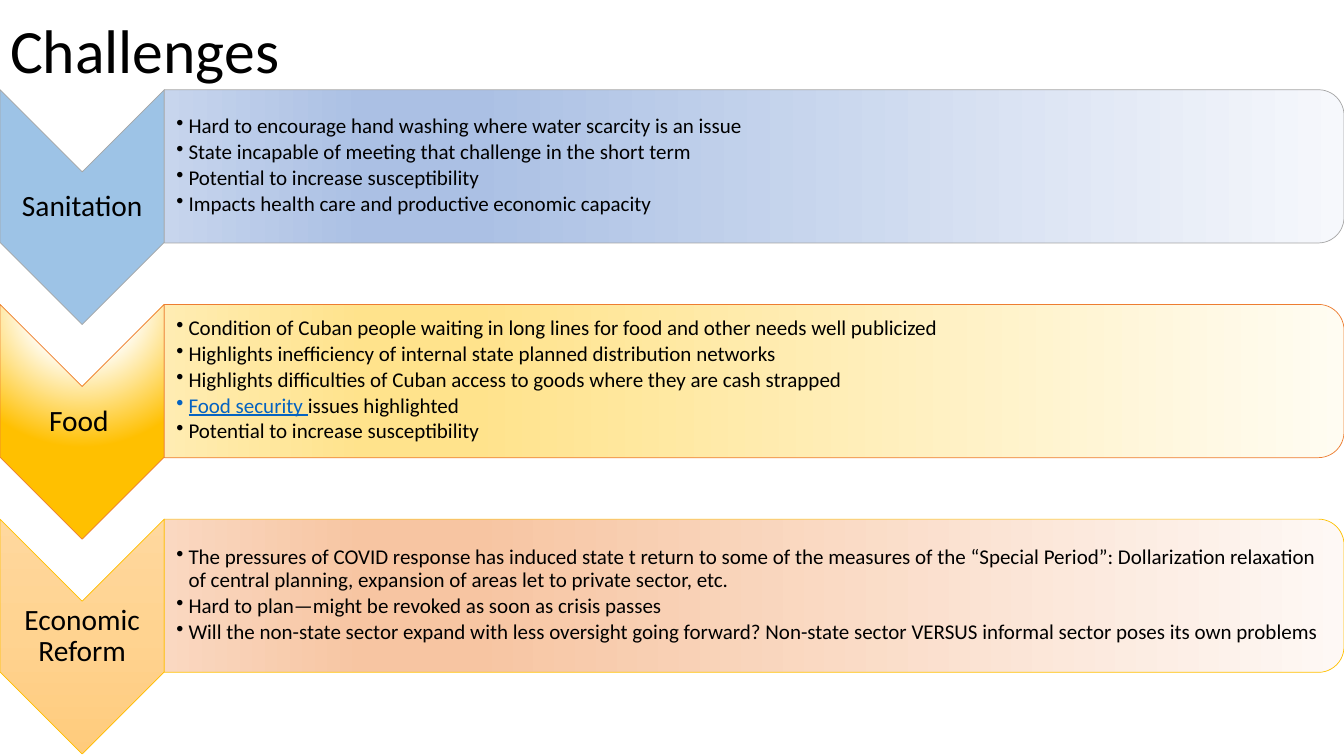
from lxml.etree import SubElement
from pptx import Presentation
from pptx.dml.color import RGBColor
from pptx.enum.shapes import MSO_SHAPE
from pptx.enum.text import MSO_ANCHOR, PP_ALIGN
from pptx.oxml import parse_xml
from pptx.oxml.ns import nsdecls, qn
from pptx.util import Inches, Pt

WIDE, HIGH = 13.33, 7.5
TOP, PITCH = 0.89, 2.13
COL, BAND, DROP = 1.63, 1.52, 2.33
FONT = "Calibri"
HEX = {"ink": "000000", "link": "0563C1", "sky": "9DC3E6",
       "gray": "A5A5A5", "rust": "ED7D31", "gold": "FFC000"}
LINEAR = '<a:lin ang="5400000" scaled="0"/>'
RADIAL = ('<a:path path="circle"><a:fillToRect l="50000" t="-80000" '
          'r="50000" b="180000"/></a:path>')
SPOTS = (0, 74, 83, 100)
LINKED = "Food security "

ROWS = [
    {"name": "Sanitation", "edge": "gray", "arrow": None,
     "band": ("F6F8FC", "ABC0E4", "ABC0E4", "C7D5ED"),
     "items": ["Hard to encourage hand washing where water scarcity is an issue",
               "State incapable of meeting that challenge in the short term",
               "Potential to increase susceptibility",
               "Impacts health care and productive economic capacity"]},
    {"name": "Food ", "edge": "rust",
     "arrow": ([(0, "FFFFFF"), (35, "FFFFFF"), (100, "FFC000")], RADIAL),
     "band": ("FFFCF2", "FFE38C", "FFE38C", "FFECB2"),
     "items": ["Condition of Cuban people waiting in long lines for food and "
               "other needs well publicized",
               "Highlights inefficiency of internal state planned distribution networks",
               "Highlights difficulties of Cuban access to goods where they are cash strapped",
               LINKED + "issues highlighted",
               "Potential to increase susceptibility"]},
    {"name": "Economic Reform", "edge": "gold",
     "arrow": ([(0, "FFD89E"), (50, "FFD390"), (100, "FFCB7C")], LINEAR),
     "band": ("FEF8F5", "F7C5A2", "F7C5A2", "FAD8C1"),
     "items": ["The pressures of COVID response has induced state t return to some "
               "of the measures of the “Special Period”: Dollarization relaxation of "
               "central planning, expansion of areas let to private sector, etc.",
               "Hard to plan—might be revoked as soon as crisis passes",
               "Will the non-state sector expand with less oversight going forward? "
               "Non-state sector VERSUS informal sector poses its own problems"]},
]


def shade(shape, stops, course, turn=1):
    """Give the shape a gradient; turn=1 makes it rotate with the shape."""
    marks = "".join(f'<a:gs pos="{spot * 1000}"><a:srgbClr val="{tone}"/></a:gs>'
                    for spot, tone in stops)
    grad = parse_xml(f'<a:gradFill {nsdecls("a")} rotWithShape="{turn}">'
                     f'<a:gsLst>{marks}</a:gsLst>{course}</a:gradFill>')
    solid = shape._element.spPr.find(qn("a:solidFill"))
    solid.getparent().replace(solid, grad)


def turned(slide, kind, left, top, wide, high, edge):
    """Add a shape turned by 90 degrees that covers the given area."""
    x, y = left + (wide - high) / 2, top + (high - wide) / 2
    shape = slide.shapes.add_shape(kind, Inches(x), Inches(y),
                                   Inches(high), Inches(wide))
    shape.rotation = 90
    shape.shadow.inherit = False
    shape.fill.solid()
    shape.fill.fore_color.rgb = RGBColor.from_string(HEX["sky"])
    shape.line.color.rgb = RGBColor.from_string(HEX[edge])
    shape.line.width = Pt(0.5)
    return shape


def bullet(para):
    props = para._p.get_or_add_pPr()
    props.set("marL", str(Inches(0.12)))
    props.set("indent", str(Inches(-0.12)))
    SubElement(props, qn("a:buChar")).set("char", "•")


def write(frame, lines, size, align=PP_ALIGN.LEFT, after=0, dots=False):
    frame.word_wrap = True
    frame.vertical_anchor = MSO_ANCHOR.MIDDLE
    for i, line in enumerate(lines):
        para = frame.paragraphs[0] if i == 0 else frame.add_paragraph()
        para.alignment = align
        para.line_spacing = 0.9
        para.space_before = Pt(0)
        para.space_after = Pt(after)
        if dots:
            bullet(para)
        head, mark, tail = line.rpartition(LINKED)
        for part in filter(None, (head, mark, tail)):
            run = para.add_run()
            run.text = part
            run.font.name, run.font.size = FONT, Pt(size)
            run.font.underline = part == LINKED
            tone = HEX["link" if part == LINKED else "ink"]
            run.font.color.rgb = RGBColor.from_string(tone)


def box(slide, left, top, wide, high, lines, size, inset=0.01, **form):
    frame = slide.shapes.add_textbox(Inches(left), Inches(top),
                                     Inches(wide), Inches(high)).text_frame
    frame.margin_left = Inches(inset)
    frame.margin_top = frame.margin_right = frame.margin_bottom = Inches(0.01)
    write(frame, lines, size, **form)


def add_row(slide, top, row):
    arrow = turned(slide, MSO_SHAPE.CHEVRON, 0, top, COL, DROP, row["edge"])
    if row["arrow"]:
        shade(arrow, *row["arrow"], turn=0)
    box(slide, 0, top + COL / 2, COL, DROP - COL, [row["name"]], 21,
        align=PP_ALIGN.CENTER)
    band = turned(slide, MSO_SHAPE.ROUND_2_SAME_RECTANGLE, COL, top,
                  WIDE - COL, BAND, row["edge"])
    shade(band, zip(SPOTS, row["band"]), LINEAR)
    box(slide, COL, top + 0.07, WIDE - COL - 0.07, BAND - 0.15, row["items"], 15,
        inset=0.12, after=2.2, dots=True)


def main():
    deck = Presentation()
    deck.slide_width, deck.slide_height = Inches(WIDE), Inches(HIGH)
    slide = deck.slides.add_slide(deck.slide_layouts[5])
    title = slide.shapes.title
    title.left, title.top = Inches(0), Inches(0.02)
    title.width, title.height = Inches(11.5), Inches(1.03)
    write(title.text_frame, ["Challenges"], 44)
    for i, row in enumerate(ROWS):
        add_row(slide, TOP + i * PITCH, row)
    deck.save("out.pptx")


if __name__ == "__main__":
    main()
